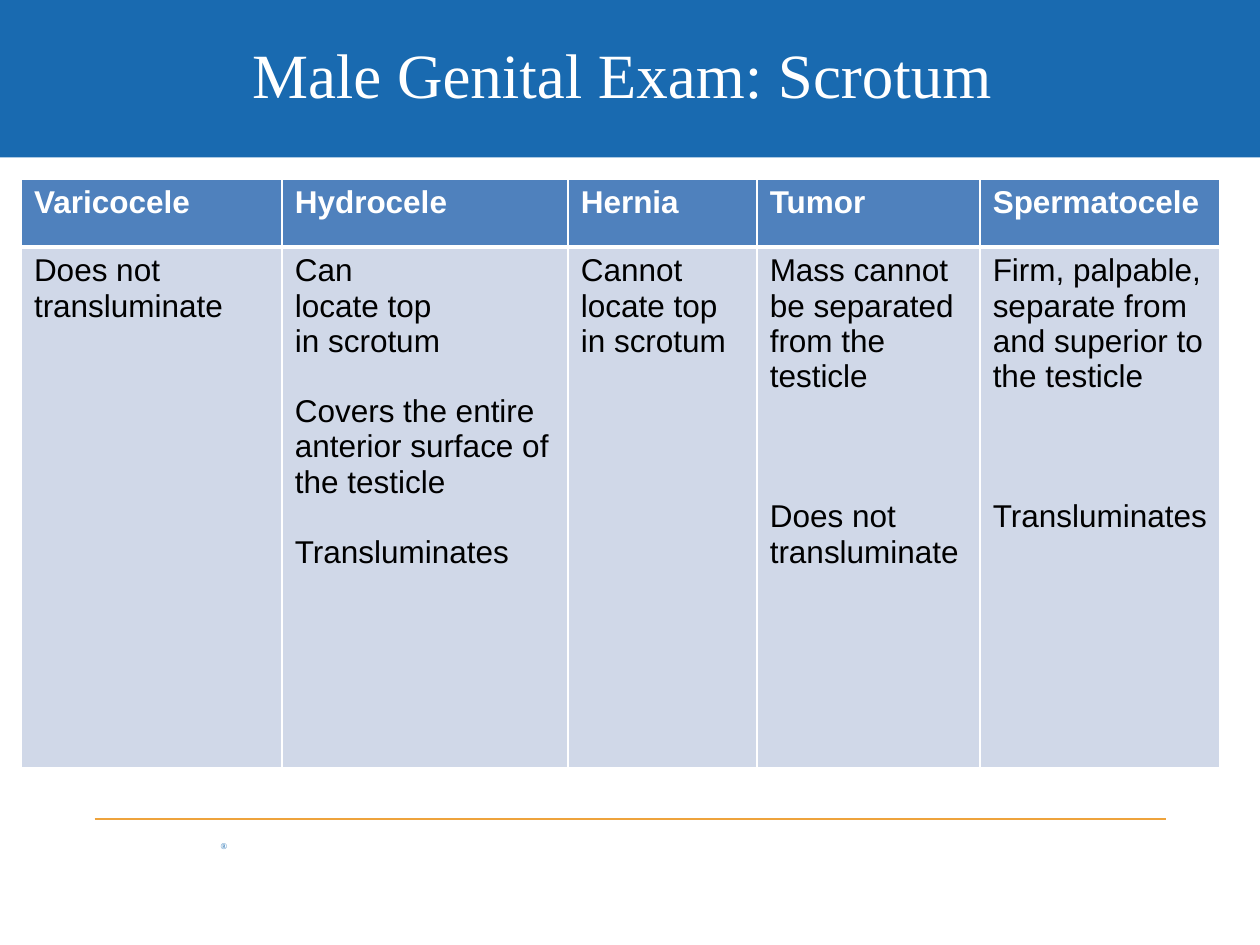
from lxml.etree import SubElement
from pptx import Presentation
from pptx.dml.color import RGBColor
from pptx.enum.shapes import MSO_CONNECTOR, MSO_SHAPE
from pptx.enum.text import MSO_ANCHOR, PP_ALIGN
from pptx.oxml.ns import qn
from pptx.util import Inches, Pt

COLORS = {
    "banner": "196AB0", "rule": "EEA33C", "header": "4F81BD",
    "body": "D0D8E8", "white": "FFFFFF", "black": "000000",
}
BLANK_LINE = 20  # points, one line of 18 pt text

# Each column: heading, width, paragraphs, blank lines between paragraphs
COLUMNS = [
    ("Varicocele", 2.07, ["Does not transluminate"], 0),
    ("Hydrocele", 2.27, ["Can \nlocate top \nin scrotum",
                         "Covers the entire anterior surface of the testicle",
                         "Transluminates"], 1),
    ("Hernia", 1.5, ["Cannot locate top in scrotum"], 0),
    ("Tumor", 1.77, ["Mass cannot be separated from the testicle",
                     "Does not transluminate"], 3),
    ("Spermatocele", 1.9, ["Firm, palpable, separate from and superior to the testicle",
                           "Transluminates"], 3),
]


def style_font(paragraph, name, size, color, bold=False):
    for run in paragraph.runs:
        run.font.name = name
        run.font.size = Pt(size)
        run.font.bold = bold
        run.font.color.rgb = RGBColor.from_string(COLORS[color])


def set_borders(cell, bottom_width):
    properties = cell._tc.get_or_add_tcPr()
    sides = [("a:lnL", 1), ("a:lnR", 1), ("a:lnT", 1), ("a:lnB", bottom_width)]
    for position, (tag, width) in enumerate(sides):
        line = SubElement(properties, qn(tag), w=str(Pt(width)))
        fill = SubElement(line, qn("a:solidFill"))
        SubElement(fill, qn("a:srgbClr"), val=COLORS["white"])
        properties.insert(position, line)


presentation = Presentation()
presentation.slide_width = Inches(10)
presentation.slide_height = Inches(7.5)
slide = presentation.slides.add_slide(presentation.slide_layouts[6])

# Title banner
banner = slide.shapes.add_shape(MSO_SHAPE.RECTANGLE, 0, 0, Inches(10), Inches(1.25))
banner.shadow.inherit = False
banner.fill.solid()
banner.fill.fore_color.rgb = RGBColor.from_string(COLORS["banner"])
banner.line.fill.background()

# Registered mark in the footer
mark = slide.shapes.add_textbox(Inches(1.75), Inches(6.67), Inches(0.25), Inches(0.08))
mark_frame = mark.text_frame
mark_frame.margin_left = mark_frame.margin_right = 0
mark_frame.margin_top = mark_frame.margin_bottom = 0
mark_frame.word_wrap = True
mark_frame.text = "®"
style_font(mark_frame.paragraphs[0], "Times New Roman", 5, "banner")

# Footer rule
rule = slide.shapes.add_connector(
    MSO_CONNECTOR.STRAIGHT, Inches(0.75), Inches(6.5), Inches(9.25), Inches(6.5))
rule.line.color.rgb = RGBColor.from_string(COLORS["rule"])
rule.line.width = Pt(0.75)
SubElement(rule._element.spPr, qn("a:effectLst"))

# Title
title = slide.shapes.add_textbox(Inches(0.5), Inches(0.08), Inches(9), Inches(1))
title_frame = title.text_frame
title_frame.word_wrap = True
title_frame.vertical_anchor = MSO_ANCHOR.MIDDLE
title_frame.text = "Male Genital Exam: Scrotum "
title_frame.paragraphs[0].alignment = PP_ALIGN.CENTER
style_font(title_frame.paragraphs[0], "Times New Roman", 36, "white")

# Comparison table
table = slide.shapes.add_table(
    2, len(COLUMNS), Inches(0.17), Inches(1.42), Inches(9.5), Inches(4.67)).table
table.rows[0].height = Inches(0.54)
table.rows[1].height = Inches(4.13)

for column, (heading, width, findings, blank_lines) in enumerate(COLUMNS):
    table.columns[column].width = Inches(width)
    rows = [([heading], "header", "white", 3), (findings, "body", "black", 1)]
    for row, (texts, fill, color, bottom_width) in enumerate(rows):
        cell = table.cell(row, column)
        cell.fill.solid()
        cell.fill.fore_color.rgb = RGBColor.from_string(COLORS[fill])
        # The body's top edge shares the header's thick bottom edge
        set_borders(cell, bottom_width)
        for index, text in enumerate(texts):
            frame = cell.text_frame
            paragraph = frame.add_paragraph() if index else frame.paragraphs[0]
            paragraph.text = text
            if index:
                paragraph.space_before = Pt(BLANK_LINE * blank_lines)
            style_font(paragraph, "Arial", 18, color, bold=row == 0)

presentation.save("out.pptx")
